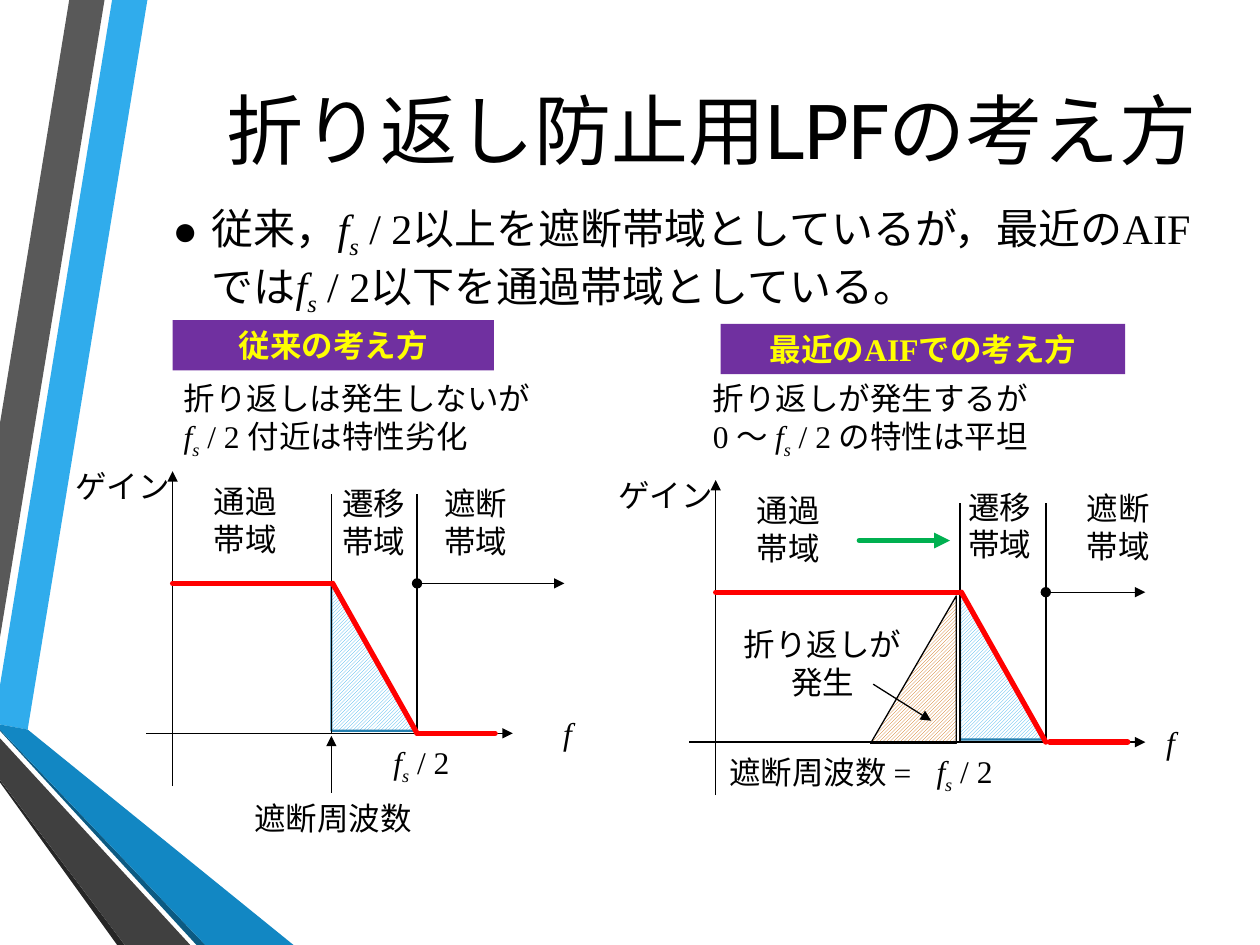
import pptx
import pptx.util
import pptx.dml.color
import pptx.enum.dml
import pptx.enum.shapes
import pptx.enum.text
import pptx.oxml.ns
import lxml.etree

SCALE = 9144  # EMU per px, at 100 px to the inch
COLORS = {
    "ink": "000000", "paper": "FFFFFF", "curve": "FF0000", "shift": "00B050",
    "banner": "7030A0", "banner_text": "FFFF00", "alias": "CC6600",
    "band": "30ACEC", "band_edge": "247FAF", "sky": "30ACEC", "gray": "595959",
    "charcoal": "262626", "navy": "0C5A82", "blue": "1287C3", "slate": "404040",
}
ALIGN = pptx.enum.text.PP_ALIGN
ANCHOR = pptx.enum.text.MSO_ANCHOR
SHAPE = pptx.enum.shapes.MSO_SHAPE
FRAME = {"word_wrap": True, "auto_size": pptx.enum.text.MSO_AUTO_SIZE.NONE}
qn = pptx.oxml.ns.qn


def px(value):
    return pptx.util.Emu(value * SCALE)


def rgb(name):
    return pptx.dml.color.RGBColor.from_string(COLORS[name])


def assign(target, values):
    for name, value in values.items():
        setattr(target, name, value)


class SlideBuilder:
    def __init__(self, slide, font="Times New Roman"):
        self.slide = slide
        self.font = font

    def place(self, shape, box):
        assign(shape, dict(zip(("left", "top", "width", "height"), map(px, box))))

    def add_run(self, paragraph, text, color, subscript=False, **style):
        run = paragraph.add_run()
        run.text = text
        assign(run.font, {"name": self.font, **style})
        run.font.color.rgb = rgb(color)
        if subscript:
            run._r.get_or_add_rPr().set("baseline", "-25000")

    def set_text(self, frame, text, align=ALIGN.CENTER, size=18, color="ink", **style):
        """Set lines of text, with each "fs" as f with subscript s."""
        assign(frame, FRAME)
        style["size"] = pptx.util.Pt(size)
        for number, line in enumerate(text.split("\n")):
            paragraph = frame.add_paragraph() if number else frame.paragraphs[0]
            paragraph.alignment = align
            for index, part in enumerate(line.split("fs")):
                if index:
                    symbol = {**style, "italic": True}
                    self.add_run(paragraph, "f", color, **symbol)
                    self.add_run(paragraph, "s", color, subscript=True, **symbol)
                if part:
                    self.add_run(paragraph, part, color, **style)

    def title(self, text, box):
        title = self.slide.shapes.title
        self.place(title, box)
        title.text_frame.vertical_anchor = ANCHOR.MIDDLE
        self.set_text(title.text_frame, text, ALIGN.RIGHT, 44, name="Cabin")

    def bullet(self, text, box):
        body = self.slide.placeholders[1]
        self.place(body, box)
        body.text_frame.vertical_anchor = ANCHOR.TOP
        self.set_text(body.text_frame, text, ALIGN.LEFT, 24)
        paragraph = body.text_frame.paragraphs[0]
        assign(paragraph, {"space_before": pptx.util.Pt(6), "space_after": pptx.util.Pt(6)})
        properties = paragraph._p.get_or_add_pPr()
        properties.set("marL", str(px(31)))
        properties.set("indent", str(px(-31)))
        lxml.etree.SubElement(properties, qn("a:buChar")).set("char", "●")

    def text(self, text, box, **style):
        label = self.slide.shapes.add_textbox(*map(px, box))
        self.set_text(label.text_frame, text, **style)

    def banner(self, text, box):
        banner = self.slide.shapes.add_shape(SHAPE.RECTANGLE, *map(px, box))
        self.paint(banner, "banner")
        self.set_text(banner.text_frame, text, color="banner_text", bold=True)

    def paint(self, shape, fill):
        shape.shadow.inherit = False
        shape.fill.solid()
        shape.fill.fore_color.rgb = rgb(fill)
        shape.line.fill.background()

    def polygon(self, points, fill):
        builder = self.slide.shapes.build_freeform(*points[0], scale=SCALE)
        builder.add_line_segments(points[1:], close=True)
        self.paint(builder.convert_to_shape(), fill)

    def triangle(self, left, top, hatch, edge, width, flip=False):
        box = (left, top, 68, 117)
        triangle = self.slide.shapes.add_shape(SHAPE.RIGHT_TRIANGLE, *map(px, box))
        triangle.shadow.inherit = False
        triangle.fill.patterned()
        triangle.fill.pattern = pptx.enum.dml.MSO_PATTERN.LIGHT_UPWARD_DIAGONAL
        triangle.fill.fore_color.rgb = rgb(hatch)
        triangle.fill.back_color.rgb = rgb("paper")
        triangle.line.color.rgb = rgb(edge)
        triangle.line.width = pptx.util.Pt(width)
        if flip:
            triangle._element.spPr.find(qn("a:xfrm")).set("flipH", "1")

    def line(self, start, end, color="ink", width=0.75, **ends):
        """Draw a line; headEnd and tailEnd name the marks at start and end."""
        straight = pptx.enum.shapes.MSO_CONNECTOR.STRAIGHT
        connector = self.slide.shapes.add_connector(straight, *map(px, start + end))
        connector.line.color.rgb = rgb(color)
        connector.line.width = pptx.util.Pt(width)
        properties = connector._element.spPr
        outline = properties.find(qn("a:ln"))
        if width >= 3:
            outline.set("cap", "rnd")
        for tag in ("headEnd", "tailEnd"):
            if tag in ends:
                lxml.etree.SubElement(outline, qn("a:" + tag)).set("type", ends[tag])
        lxml.etree.SubElement(properties, qn("a:effectLst"))

    def arrow(self, start, end, **style):
        self.line(start, end, tailEnd="triangle", **style)

    def filter_plot(self, axis, base, edge, axis_end, stop_end, floor,
                    half_rate_left, f_left, f_width, bands):
        """Draw a low-pass gain curve; edge is the end of the pass band."""
        top, stop = base - 119, edge + 68
        self.triangle(edge, top, "band", "band_edge", 1.25)
        # Axes and band limits
        self.arrow((axis - 21, base), (axis_end, base))
        self.arrow((axis, base + 42), (axis, base - 208))
        for limit in (edge, stop):
            self.line((limit, base), (limit, base - 190), width=1)
        # Gain curve
        for start, end in (((axis, top), (edge + 1, top)),
                           ((edge + 1, top), (stop, base)),
                           ((floor, base), (floor + 62, base))):
            self.line(start, end, color="curve", width=3)
        self.arrow((stop, top), (stop_end, top), headEnd="oval")
        # Labels
        self.text("ゲイン", (axis - 125, base - 216, 171, 40))
        self.text("fs / 2", (half_rate_left, base + 3, 109, 72))
        self.text("f", (f_left, base - 20, f_width, 40), italic=True)
        for name, (left, band_top) in zip(("通過", "遷移", "遮断"), bands):
            self.text(name + "\n帯域", (left, band_top, 171, 71))


def main():
    deck = pptx.Presentation()
    assign(deck, {"slide_width": px(1000), "slide_height": px(750)})
    page = SlideBuilder(deck.slides.add_slide(deck.slide_layouts[1]))

    # Ribbons on the left edge
    for color, points in (
        ("sky", [(0, 544), (0, 575), (22, 579), (117, 0), (89, 0)]),
        ("gray", [(83, 0), (55, 0), (0, 336), (0, 506)]),
        ("charcoal", [(0, 619), (0, 621), (93, 750), (99, 750)]),
        ("navy", [(0, 579), (0, 580), (156, 750), (163, 750)]),
        ("blue", [(0, 579), (163, 750), (233, 750), (22, 579), (0, 575)]),
        ("slate", [(0, 619), (99, 750), (151, 750), (0, 586)]),
    ):
        page.polygon(points, color)

    # Title and statement
    page.title("折り返し防止用LPFの考え方", (92, 46, 868, 112))
    page.bullet("従来，fs / 2以上を遮断帯域としているが，最近のAIFではfs / 2以下を通過帯域としている。",
                (127, 156, 858, 63))

    # Conventional filter
    page.filter_plot(axis=137, base=582, edge=263, axis_end=407, stop_end=448,
                     floor=331, half_rate_left=280, f_left=427, f_width=47,
                     bands=((109, 378), (211, 379), (292, 379)))
    page.text("遮断周波数", (183, 629, 163, 40))
    page.arrow((263, 629), (263, 584))

    # Recent filter, with the aliased part
    page.triangle(691, 473, "alias", "ink", 0.75, flip=True)
    page.filter_plot(axis=568, base=589, edge=762, axis_end=909, stop_end=909,
                     floor=833, half_rate_left=711, f_left=893, f_width=72,
                     bands=((540, 385), (708, 382), (802, 383)))
    page.text("遮断周波数 =", (563, 593, 176, 40))
    page.arrow((682, 429), (754, 429), color="shift", width=3)
    page.text("折り返しが\n発生", (565, 491, 176, 71))
    page.arrow((693, 543), (739, 572))

    # Headings and remarks
    page.banner("従来の考え方", (137, 254, 255, 40))
    page.banner("最近のAIFでの考え方", (572, 257, 321, 40))
    for left, remark in ((136, "折り返しは発生しないが\nfs / 2 付近は特性劣化"),
                         (556, "折り返しが発生するが\n0 ～ fs / 2 の特性は平坦")):
        page.text(remark, (left, 296, 344, 71), align=ALIGN.LEFT)

    deck.save("out.pptx")


if __name__ == "__main__":
    main()
